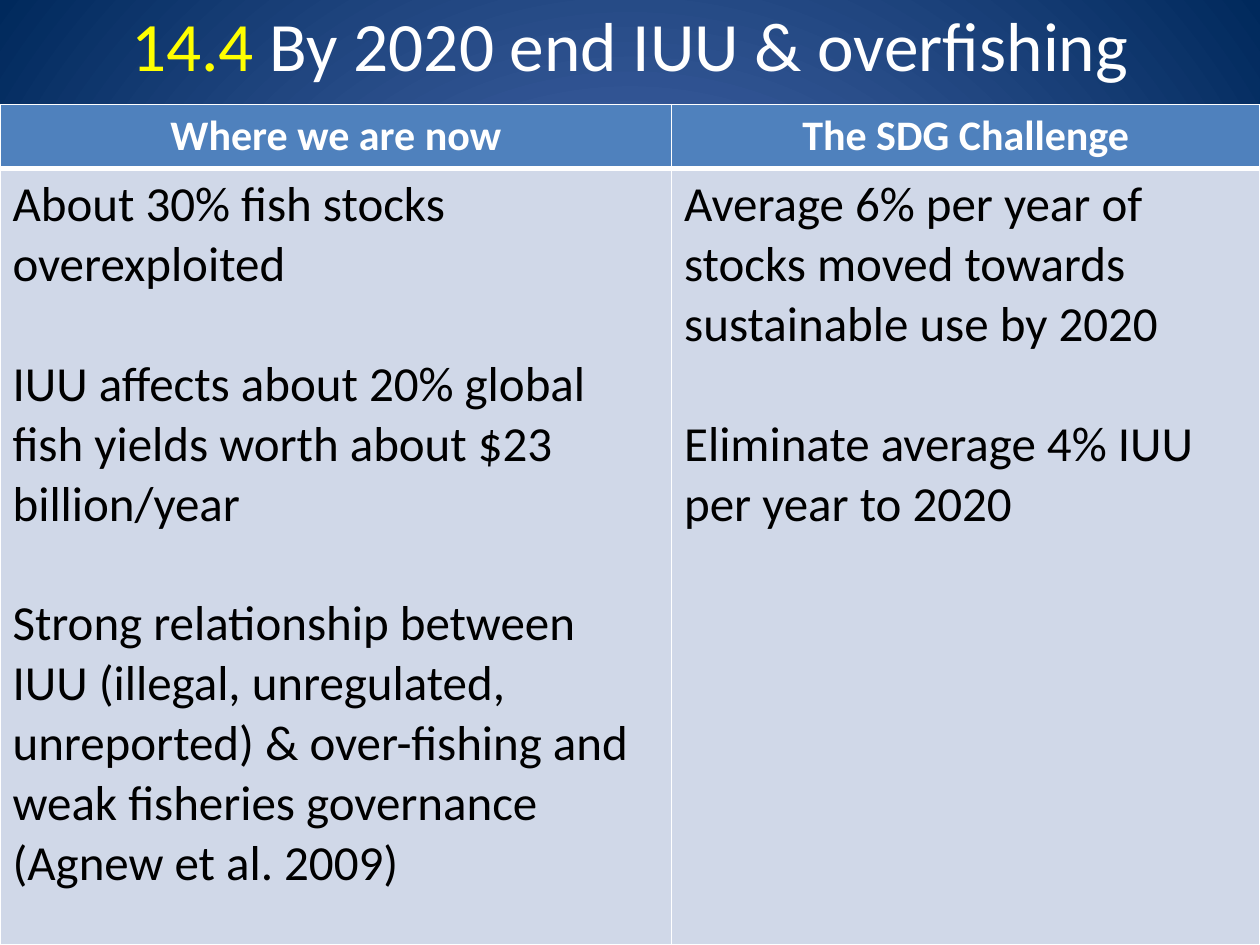
from dataclasses import dataclass

from lxml.etree import SubElement
from pptx import Presentation
from pptx.dml.color import RGBColor
from pptx.enum.text import MSO_ANCHOR, PP_ALIGN
from pptx.oxml.ns import qn
from pptx.util import Inches, Pt


@dataclass(frozen=True)
class Theme:
    font: str = "Calibri"
    glow: str = "5E7CC5"
    navy: str = "00295C"
    highlight: str = "FFFF00"
    white: str = "FFFFFF"
    black: str = "000000"
    header_fill: str = "4F81BD"
    body_fill: str = "D0D8E8"
    title_size: float = 39.6
    header_size: float = 24
    body_size: float = 28
    paragraph_gap: float = 34.2


def add_run(paragraph, text, *, font, size, color, bold=False):
    run = paragraph.add_run()
    run.text = text
    run.font.name = font
    run.font.size = Pt(size)
    run.font.bold = bold
    run.font.color.rgb = RGBColor.from_string(color)


class SlideBuilder:
    def __init__(self, presentation, theme):
        self.theme = theme
        self.slide = presentation.slides.add_slide(presentation.slide_layouts[5])

    def set_background(self):
        """Radial gradient, light in the centre and dark at the corners."""
        fill = self.slide.background.fill
        fill.gradient()
        for stop, position, color in zip(
            fill.gradient_stops, (0, 1), (self.theme.glow, self.theme.navy)
        ):
            stop.position = position
            stop.color.rgb = RGBColor.from_string(color)
        gradient = self.slide.element.find(".//" + qn("a:gradFill"))
        gradient.remove(gradient.find(qn("a:lin")))
        circle = SubElement(gradient, qn("a:path"), path="circle")
        SubElement(circle, qn("a:fillToRect"), l="50000", t="50000", r="50000", b="50000")

    def add_title(self, parts, left, top, width, height):
        """Fill the title placeholder with (text, colour) parts."""
        title = self.slide.shapes.title
        title.left, title.top = Inches(left), Inches(top)
        title.width, title.height = Inches(width), Inches(height)
        title.text_frame.vertical_anchor = MSO_ANCHOR.MIDDLE
        paragraph = title.text_frame.paragraphs[0]
        paragraph.alignment = PP_ALIGN.CENTER
        for text, color in parts:
            add_run(paragraph, text, font=self.theme.font,
                    size=self.theme.title_size, color=color)

    def add_table(self, columns, left, top, column_widths, row_heights):
        """Draw one column per (heading, paragraphs) pair."""
        table = self.slide.shapes.add_table(
            2, len(columns), Inches(left), Inches(top),
            Inches(sum(column_widths)), Inches(sum(row_heights)),
        ).table
        for column, width in zip(table.columns, column_widths):
            column.width = Inches(width)
        for row, height in zip(table.rows, row_heights):
            row.height = Inches(height)
        theme = self.theme
        for index, (heading, paragraphs) in enumerate(columns):
            header, body = table.cell(0, index), table.cell(1, index)
            self.style_cell(header, theme.header_fill, bottom=3)
            self.style_cell(body, theme.body_fill, top=3)
            self.write_cell(header, [heading], align=PP_ALIGN.CENTER,
                            size=theme.header_size, color=theme.white, bold=True)
            self.write_cell(body, paragraphs, align=PP_ALIGN.LEFT,
                            size=theme.body_size, color=theme.black)

    def style_cell(self, cell, fill, top=1, bottom=1):
        properties = cell._tc.get_or_add_tcPr()
        for side, width in (("L", 1), ("R", 1), ("T", top), ("B", bottom)):
            line = SubElement(properties, qn("a:ln" + side), w=str(Pt(width)))
            solid = SubElement(line, qn("a:solidFill"))
            SubElement(solid, qn("a:srgbClr"), val=self.theme.white)
        cell.fill.solid()
        cell.fill.fore_color.rgb = RGBColor.from_string(fill)

    def write_cell(self, cell, texts, *, align, **text_format):
        frame = cell.text_frame
        for index, text in enumerate(texts):
            paragraph = frame.add_paragraph() if index else frame.paragraphs[0]
            paragraph.alignment = align
            if index:
                paragraph.space_before = Pt(self.theme.paragraph_gap)
            add_run(paragraph, text, font=self.theme.font, **text_format)


def main():
    presentation = Presentation()
    presentation.slide_width, presentation.slide_height = Inches(10), Inches(7.5)
    theme = Theme()
    builder = SlideBuilder(presentation, theme)
    builder.set_background()
    builder.add_title(
        [("14.4", theme.highlight), (" By 2020 end IUU & overfishing", theme.white)],
        0.5, -0.14, 9, 0.98,
    )
    builder.add_table(
        [
            ("Where we are now", [
                "About 30% fish stocks overexploited",
                "IUU affects about 20% global fish yields worth about $23 billion/year",
                "Strong relationship between IUU (illegal, unregulated, unreported) "
                "& over-fishing and weak fisheries governance (Agnew et al. 2009)",
            ]),
            ("The SDG Challenge", [
                "Average 6% per year of stocks moved towards sustainable use by 2020",
                "Eliminate average 4% IUU per year to 2020",
            ]),
        ],
        left=0, top=0.83, column_widths=(5.33, 4.67), row_heights=(0.51, 6.16),
    )
    presentation.save("out.pptx")


if __name__ == "__main__":
    main()
